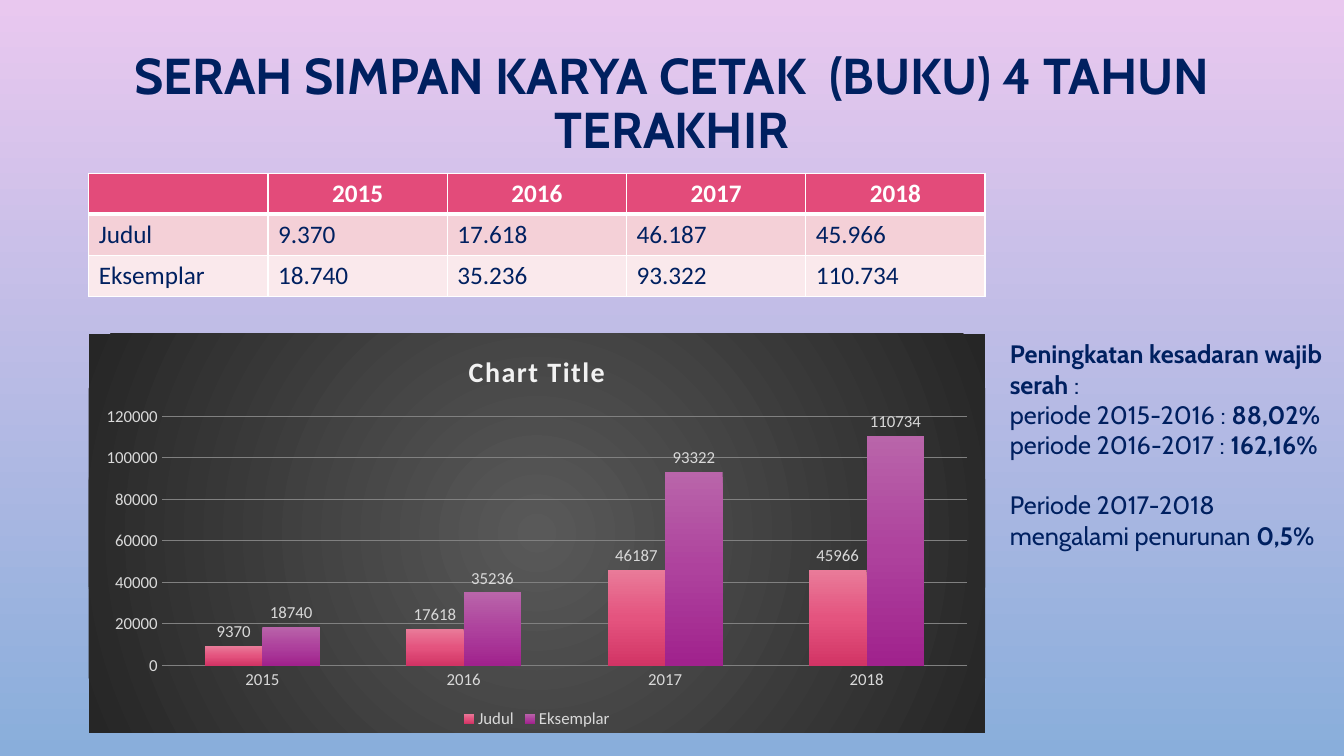
from pptx import Presentation
from pptx.chart.data import CategoryChartData
from pptx.dml.color import RGBColor
from pptx.enum.chart import XL_CHART_TYPE, XL_LABEL_POSITION, XL_LEGEND_POSITION, XL_TICK_MARK
from pptx.enum.text import MSO_ANCHOR, MSO_AUTO_SIZE, PP_ALIGN
from pptx.oxml import parse_xml
from pptx.oxml.ns import nsdecls, qn
from pptx.util import Inches, Pt

COLORS = {
    "navy": "002060", "white": "FFFFFF", "header": "E34B7A",
    "band_dark": "F4D0D7", "band_light": "FAE9EC",
    "chart_title": "F2F2F2", "chart_text": "D9D9D9", "grid": "808080",
    "sky_top": "E9C8EF", "sky_bottom": "89AEDB",
    "panel_center": "595959", "panel_edge": "262626",
    "pink_top": "E97B99", "pink_middle": "E4547F", "pink_bottom": "D23465",
    "purple_top": "B965AA", "purple_middle": "AE429D", "purple_bottom": "A0228D",
}
YEARS = ["2015", "2016", "2017", "2018"]
DEPOSITS = {"Judul": [9370, 17618, 46187, 45966], "Eksemplar": [18740, 35236, 93322, 110734]}
SERIES_TONES = ["pink", "purple"]
NOTES = [
    [("Peningkatan kesadaran wajib serah ", True), (":", False)],
    [("periode 2015-2016 : ", False), ("88,02%", True)],
    [("periode 2016-2017 : ", False), ("162,16%", True)],
    [("Periode 2017-2018 mengalami penurunan ", False), ("0,5%", True)],
]


class DepositSlide:
    """Draws the elements of one slide, with boxes given in percent of its size."""

    heading_font = "Cabin"
    data_font = "Calibri"

    def __init__(self, presentation):
        self.width, self.height = presentation.slide_width, presentation.slide_height
        self.slide = presentation.slides.add_slide(presentation.slide_layouts[5])

    def box(self, left, top, width, height):
        return (int(self.width * left / 100), int(self.height * top / 100),
                int(self.width * width / 100), int(self.height * height / 100))

    def style(self, font, size, color, bold=False, name=None):
        font.name = name or self.data_font
        font.size = Pt(size)
        font.bold = bold
        font.color.rgb = RGBColor.from_string(COLORS[color])

    def gradient(self, names, circular=False):
        step = 100000 // (len(names) - 1)
        stops = "".join(
            f'<a:gs pos="{index * step}"><a:srgbClr val="{COLORS[name]}"/></a:gs>'
            for index, name in enumerate(names))
        direction = '<a:lin ang="5400000" scaled="0"/>'
        if circular:
            direction = ('<a:path path="circle"><a:fillToRect l="50000" t="50000" '
                         'r="50000" b="50000"/></a:path>')
        return parse_xml(f'<a:gradFill {nsdecls("a")} rotWithShape="1">'
                         f'<a:gsLst>{stops}</a:gsLst>{direction}</a:gradFill>')

    def replace_fill(self, fill, parent, names):
        fill.solid()
        solid = parent.find(".//" + qn("a:solidFill"))
        solid.getparent().replace(solid, self.gradient(names))

    def background(self, names):
        fill = self.slide.background.fill
        self.replace_fill(fill, self.slide.element.find(".//" + qn("p:bgPr")), names)

    def title(self, text, box):
        shape = self.slide.shapes.title
        shape.left, shape.top, shape.width, shape.height = self.box(*box)
        frame = shape.text_frame
        frame.text = text
        frame.auto_size = MSO_AUTO_SIZE.NONE
        frame.vertical_anchor = MSO_ANCHOR.MIDDLE
        paragraph = frame.paragraphs[0]
        paragraph.alignment = PP_ALIGN.CENTER
        paragraph.line_spacing = 0.9
        self.style(paragraph.runs[0].font, 36, "navy", True, self.heading_font)

    def border(self, cell, row):
        properties = cell._tc.get_or_add_tcPr()
        thick = {(0, "B"), (1, "T")}
        for index, side in enumerate("LRTB"):
            width = Pt(3 if (row, side) in thick else 1)
            properties.insert(index, parse_xml(
                f'<a:ln{side} {nsdecls("a")} w="{width}"><a:solidFill>'
                f'<a:srgbClr val="{COLORS["white"]}"/></a:solidFill></a:ln{side}>'))

    def table(self, rows, fills, box):
        left, top, width, height = self.box(*box)
        table = self.slide.shapes.add_table(
            len(rows), len(rows[0]), left, top, width, height).table
        for row, (values, fill) in enumerate(zip(rows, fills)):
            for column, value in enumerate(values):
                cell = table.cell(row, column)
                cell.fill.solid()
                cell.fill.fore_color.rgb = RGBColor.from_string(COLORS[fill])
                self.border(cell, row)
                cell.text_frame.text = value
                paragraph = cell.text_frame.paragraphs[0]
                paragraph.alignment = PP_ALIGN.LEFT if row else PP_ALIGN.CENTER
                self.style(paragraph.font, 18, "navy" if row else "white", row == 0)

    def axis(self, axis):
        axis.major_tick_mark = axis.minor_tick_mark = XL_TICK_MARK.NONE
        axis.format.line.fill.background()
        self.style(axis.tick_labels.font, 12, "chart_text")

    def chart(self, title, categories, series_values, box):
        data = CategoryChartData()
        data.categories = categories
        for name, values in series_values.items():
            data.add_series(name, values)
        chart = self.slide.shapes.add_chart(
            XL_CHART_TYPE.COLUMN_CLUSTERED, *self.box(*box), data).chart
        self.style(chart.font, 10, "chart_text")
        panel = parse_xml(f'<c:spPr {nsdecls("c", "a")}><a:ln><a:noFill/></a:ln></c:spPr>')
        panel.insert(0, self.gradient(["panel_center", "panel_edge"], circular=True))
        chart._chartSpace.find(qn("c:txPr")).addprevious(panel)

        chart.has_title = True
        chart.chart_title.include_in_layout = False
        chart.chart_title.text_frame.text = title
        run = chart.chart_title.text_frame.paragraphs[0].runs[0]
        self.style(run.font, 20, "chart_title", True)
        run.font._element.set("spc", "100")
        chart.has_legend = True
        chart.legend.position = XL_LEGEND_POSITION.BOTTOM
        chart.legend.include_in_layout = False
        self.style(chart.legend.font, 12, "chart_text")

        self.axis(chart.category_axis)
        self.axis(chart.value_axis)
        chart.value_axis.minimum_scale, chart.value_axis.maximum_scale = 0, 120000
        chart.value_axis.major_unit = 20000
        grid = chart.value_axis.major_gridlines.format.line
        grid.width = Pt(0.75)
        grid.color.rgb = RGBColor.from_string(COLORS["grid"])

        plot = chart.plots[0]
        plot.gap_width, plot.overlap, plot.vary_by_categories = 150, 0, False
        for series, tone in zip(plot.series, SERIES_TONES):
            names = [f"{tone}_{part}" for part in ("top", "middle", "bottom")]
            self.replace_fill(series.format.fill, series._element, names)
            labels = series.data_labels
            labels.show_value = True
            labels.position = XL_LABEL_POSITION.OUTSIDE_END
            self.style(labels.font, 12, "chart_text")

    def notes(self, paragraphs, box):
        frame = self.slide.shapes.add_textbox(*self.box(*box)).text_frame
        frame.word_wrap = True
        for index, parts in enumerate(paragraphs):
            paragraph = frame.add_paragraph() if index else frame.paragraphs[0]
            for text, bold in parts:
                run = paragraph.add_run()
                run.text = text
                self.style(run.font, 18, "navy", bold, self.heading_font)
        paragraph.space_before = Pt(21.5)


def main():
    presentation = Presentation()
    presentation.slide_width, presentation.slide_height = Inches(13.33), Inches(7.5)
    page = DepositSlide(presentation)
    page.background(["sky_top", "sky_bottom"])
    page.title("SERAH SIMPAN KARYA CETAK  (BUKU) 4 TAHUN TERAKHIR", (7.5, 4.93, 85, 18))
    page.chart("Chart Title", YEARS, DEPOSITS, (6.6, 44.13, 66.7, 52.8))
    rows = [["", *YEARS]]
    for name, values in DEPOSITS.items():
        rows.append([name, *(f"{value:,}".replace(",", ".") for value in values)])
    page.table(rows, ["header", "band_dark", "band_light"], (6.6, 22.93, 66.7, 16.27))
    page.notes(NOTES, (74.4, 44.13, 25.6, 33.6))
    presentation.save("out.pptx")


if __name__ == "__main__":
    main()
